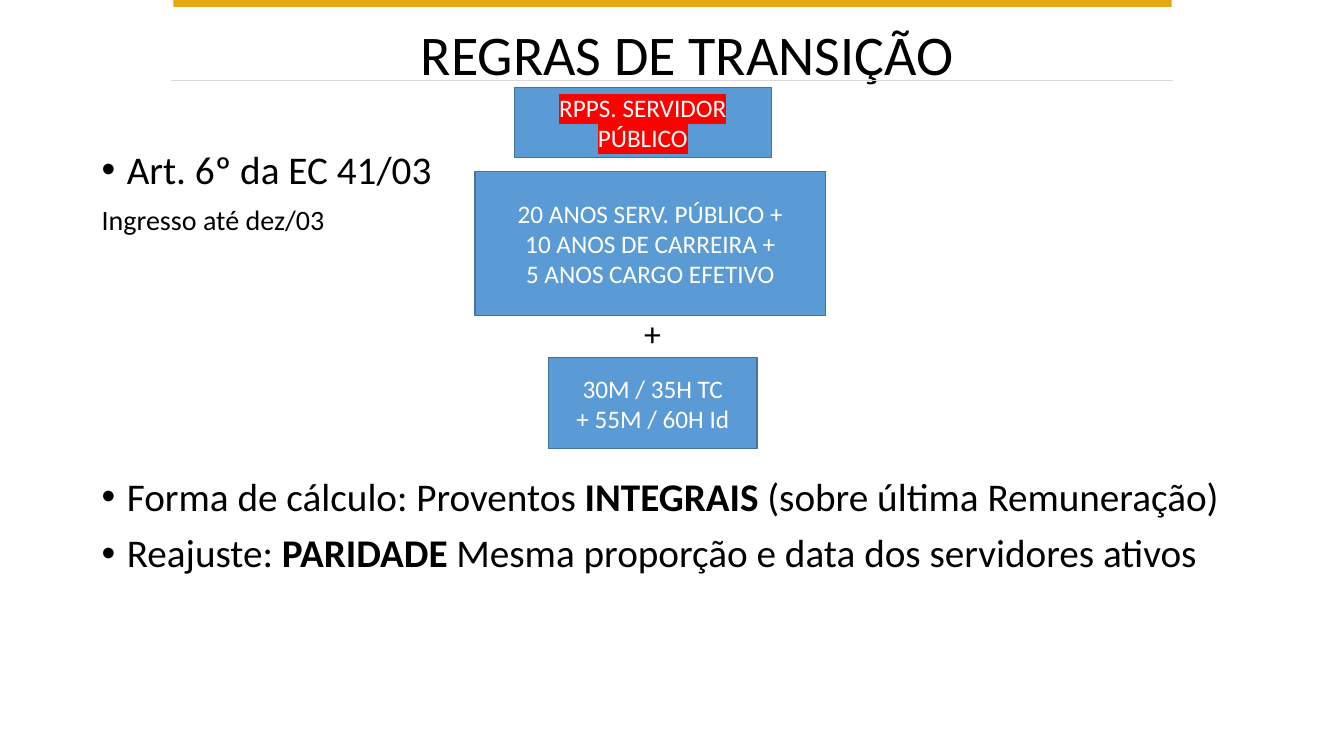
"""Builds the slide on the transition rules for public servants' pensions."""
from lxml import etree
from pptx import Presentation
from pptx.dml.color import RGBColor
from pptx.enum.shapes import MSO_CONNECTOR, MSO_SHAPE
from pptx.enum.text import MSO_ANCHOR, MSO_AUTO_SIZE, PP_ALIGN
from pptx.oxml.ns import qn
from pptx.util import Inches, Pt

RECTANGLE = MSO_SHAPE.RECTANGLE
STRAIGHT = MSO_CONNECTOR.STRAIGHT
MIDDLE = MSO_ANCHOR.MIDDLE
CENTER = PP_ALIGN.CENTER
NO_AUTOFIT = MSO_AUTO_SIZE.NONE

FONT = "Calibri"
COLORS = {
    "gold": "E5A812", "rule": "D9D9D9", "blue": "5B9BD5", "edge": "43739E",
    "red": "FF0000", "white": "FFFFFF", "black": "000000",
}
TITLE = "REGRAS DE TRANSIÇÃO"
REQUIREMENTS = [
    ((5.1, 0.87, 2.55, 0.69), ["RPPS. SERVIDOR PÚBLICO"], "red"),
    ((5.44, 3.55, 2.07, 0.9), ["30M / 35H TC", "+ 55M / 60H Id"], None),
    ((4.71, 1.7, 3.48, 1.43),
     ["20 ANOS SERV. PÚBLICO +", "10 ANOS DE CARREIRA +", "5 ANOS CARGO EFETIVO"], None),
]
BODY = [
    (True, 28, 0, [("Art. 6º da EC 41/03", False)]),
    (False, 20, 10, [("Ingresso até dez/03", False)]),
    (True, 28, 172, [("Forma de cálculo: Proventos ", False), ("INTEGRAIS ", True),
                     ("(sobre última Remuneração)", False)]),
    (True, 28, 10, [("Reajuste: ", False), ("PARIDADE", True),
                    (" Mesma proporção e data dos servidores ativos", False)]),
]


def color(name):
    return RGBColor.from_string(COLORS[name])


def add_span(para, text, size, ink="black", bold=False, highlight=None):
    span = para.add_run()
    span.text = text
    span.font.size = Pt(size)
    span.font.bold = bold
    span.font.color.rgb = color(ink)
    span.font.name = FONT
    if highlight:
        mark = etree.Element(qn("a:highlight"))
        etree.SubElement(mark, qn("a:srgbClr"), val=COLORS[highlight])
        span.font._element.find(qn("a:solidFill")).addnext(mark)


def add_rectangle(page, place, fill, edge=None):
    box = page.shapes.add_shape(RECTANGLE, *map(Inches, place))
    box.shadow.inherit = False
    box.fill.solid()
    box.fill.fore_color.rgb = color(fill)
    if edge:
        box.line.color.rgb = color(edge)
        box.line.width = Pt(1)
    else:
        box.line.fill.background()
    return box


def add_header(page):
    add_rectangle(page, (1.72, 0, 9.9, 0.07), "gold")
    rule = page.shapes.add_connector(STRAIGHT, Inches(1.7), Inches(0.8), Inches(11.63), Inches(0.8))
    rule.line.color.rgb = color("rule")
    rule.line.width = Pt(0.5)
    etree.SubElement(rule._element.spPr, qn("a:effectLst"))
    title = page.shapes.title
    title.left, title.top, title.width, title.height = map(Inches, (0.12, 0.08, 13.39, 0.97))
    frame = title.text_frame
    frame.auto_size = NO_AUTOFIT
    frame.vertical_anchor = MIDDLE
    para = frame.paragraphs[0]
    para.alignment = CENTER
    para.line_spacing = 0.9
    add_span(para, TITLE, 40)


def add_requirement(page, place, lines, highlight):
    frame = add_rectangle(page, place, "blue", "edge").text_frame
    frame.word_wrap = True
    frame.vertical_anchor = MIDDLE
    for index, line in enumerate(lines):
        para = frame.add_paragraph() if index else frame.paragraphs[0]
        para.alignment = CENTER
        add_span(para, line, 18, "white", highlight=highlight)


def add_body(page):
    frame = page.shapes.add_textbox(*map(Inches, (0.91, 1.44, 11.81, 5.12))).text_frame
    frame.word_wrap = True
    for index, (bulleted, size, before, spans) in enumerate(BODY):
        para = frame.add_paragraph() if index else frame.paragraphs[0]
        para.line_spacing = 0.9
        para.space_before = Pt(before)
        if bulleted:
            settings = para._p.get_or_add_pPr()
            settings.set("marL", str(Inches(0.25)))
            settings.set("indent", str(Inches(-0.25)))
            etree.SubElement(settings, qn("a:buFont"), typeface="Arial")
            etree.SubElement(settings, qn("a:buChar"), char="•")
        for text, bold in spans:
            add_span(para, text, size, bold=bold)


def main():
    deck = Presentation()
    deck.slide_width, deck.slide_height = Inches(13.33), Inches(7.5)
    page = deck.slides.add_slide(deck.slide_layouts[5])
    add_header(page)
    add_body(page)
    for place, lines, highlight in REQUIREMENTS:
        add_requirement(page, place, lines, highlight)
    plus = page.shapes.add_textbox(*map(Inches, (6.29, 3.06, 0.37, 0.5)))
    plus.text_frame.word_wrap = False
    add_span(plus.text_frame.paragraphs[0], "+", 24)
    deck.save("out.pptx")


if __name__ == "__main__":
    main()
